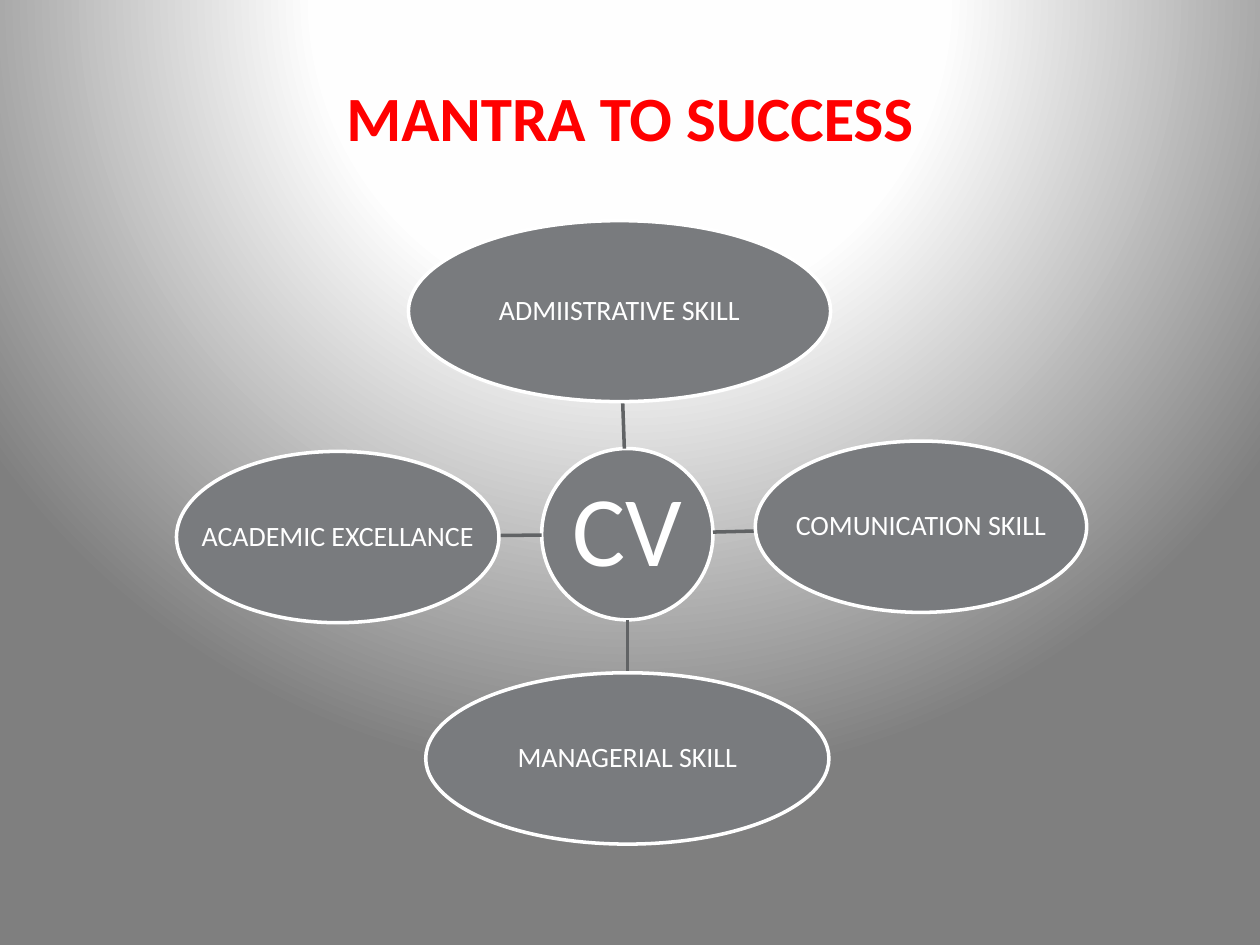
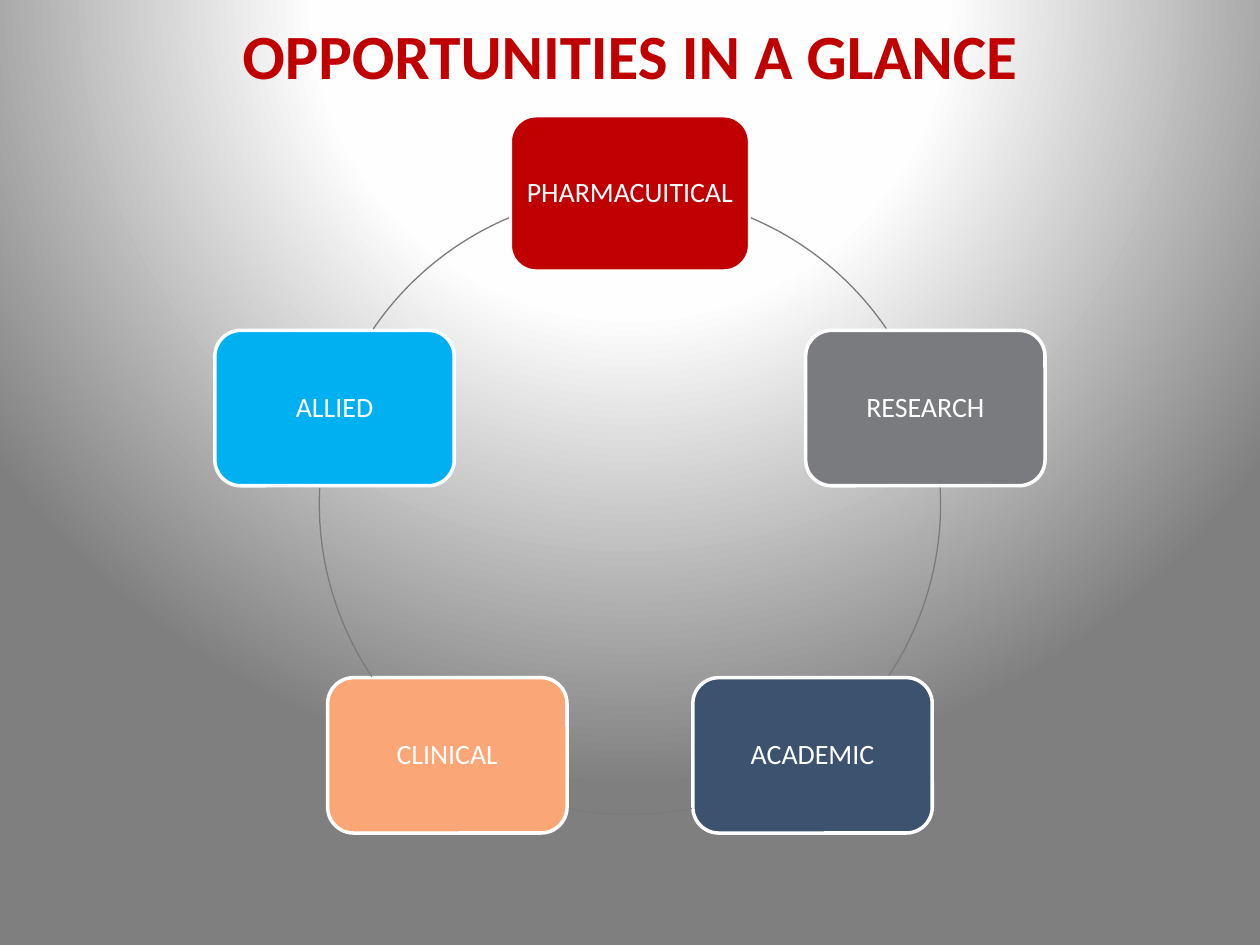
from math import cos, hypot, radians, sin

from pptx import Presentation
from pptx.dml.color import RGBColor
from pptx.enum.shapes import MSO_CONNECTOR as Link, MSO_SHAPE as Shape
from pptx.enum.text import MSO_ANCHOR as Anchor, PP_ALIGN as Align
from pptx.oxml import parse_xml
from pptx.oxml.ns import nsdecls, qn
from pptx.util import Pt

FONT = "Calibri"
COLORS = {
    "white": "FFFFFF", "near_white": "FEFEFE", "shade": "7F7F7F",
    "red": "FF0000", "dark_red": "C00000", "gray": "797B7E",
    "spoke": "616365", "navy": "3C526F", "peach": "FBA676", "sky": "00B0F0",
}

# Slide 1: hub and skills as (label, centre x, centre y, width, height)
HUB = ("CV", 358.5, 305.3, 97.9, 97.9)
SKILLS = [
    ("ADMIISTRATIVE SKILL", 354, 177.8, 241.2, 103.4),
    ("COMUNICATION SKILL", 526.3, 301, 189.4, 97.9),
    ("MANAGERIAL SKILL", 358.5, 433.4, 230.4, 97.9),
    ("ACADEMIC EXCELLANCE", 193, 306.9, 184.3, 97.9),
]

# Slide 2: fields clockwise from the top of a ring
FIELDS = [("PHARMACUITICAL", "dark_red"), ("RESEARCH", "gray"),
          ("ACADEMIC", "navy"), ("CLINICAL", "peach"), ("ALLIED", "sky")]
RING_X, RING_Y, RING_RADIUS = 360, 288, 177.5
FIELD_W, FIELD_H = 136.8, 88.8
# Visible arcs in degrees, clockwise from east
ARCS = [(292.9, 325.7), (357, 33.8), (78.5, 101.5), (146.2, 183), (214.3, 247.1)]


def rgb(name):
    return RGBColor.from_string(COLORS[name])


def set_background(master):
    """Radial gradient centred above the slide, shared by all slides."""
    master.background.fill.solid()
    solid = master.element.find(".//" + qn("p:bgPr")).find(qn("a:solidFill"))
    stops = "".join(
        f'<a:gs pos="{pos * 1000}"><a:srgbClr val="{COLORS[name]}"/></a:gs>'
        for pos, name in [(0, "white"), (40, "near_white"), (100, "shade")])
    gradient = parse_xml(
        f'<a:gradFill {nsdecls("a")} rotWithShape="1"><a:gsLst>{stops}</a:gsLst>'
        '<a:path path="circle"><a:fillToRect l="50000" t="-80000" r="50000" '
        'b="180000"/></a:path></a:gradFill>')
    solid.getparent().replace(solid, gradient)


def write(frame, text, size, color, bold=False):
    frame.vertical_anchor = Anchor.MIDDLE
    paragraph = frame.paragraphs[0]
    paragraph.alignment = Align.CENTER
    run = paragraph.add_run()
    run.text = text
    run.font.name, run.font.size, run.font.bold = FONT, Pt(size), bold
    run.font.color.rgb = rgb(color)
    return paragraph


def add_title(slide, text, top, height, color):
    title = slide.shapes.add_textbox(Pt(36), Pt(top), Pt(648), Pt(height))
    title.text_frame.word_wrap = True
    write(title.text_frame, text, 36, color, bold=True)


def add_node(slide, outline, label, x, y, width, height, color="gray", size=16):
    """Filled, white-edged shape centred on (x, y)."""
    node = slide.shapes.add_shape(outline, Pt(x - width / 2), Pt(y - height / 2),
                                  Pt(width), Pt(height))
    node.shadow.inherit = False
    node.fill.solid()
    node.fill.fore_color.rgb = rgb(color)
    node.line.color.rgb = rgb("white")
    node.line.width = Pt(2)
    frame = node.text_frame
    frame.word_wrap = False
    frame.margin_left = frame.margin_right = Pt(1)
    frame.margin_top = frame.margin_bottom = Pt(1)
    write(frame, label, size, "white").line_spacing = 0.9


def rim_point(ellipse, target):
    """Where the line from an ellipse's centre to a target's leaves its rim."""
    _, x, y, width, height = ellipse
    dx, dy = target[1] - x, target[2] - y
    scale = 1 / hypot(dx / (width / 2), dy / (height / 2))
    return Pt(x + dx * scale), Pt(y + dy * scale)


def add_spoke(slide, hub, skill):
    spoke = slide.shapes.add_connector(Link.STRAIGHT, *rim_point(hub, skill),
                                       *rim_point(skill, hub))
    spoke.line.color.rgb = rgb("spoke")
    spoke.line.width = Pt(2)
    spoke.element.spPr.append(parse_xml(f'<a:effectLst {nsdecls("a")}/>'))


def add_arc(slide, start, end):
    arc = slide.shapes.add_shape(
        Shape.ARC, Pt(RING_X - RING_RADIUS), Pt(RING_Y - RING_RADIUS),
        Pt(2 * RING_RADIUS), Pt(2 * RING_RADIUS))
    arc.shadow.inherit = False
    arc.fill.background()
    arc.line.color.rgb = rgb("gray")
    arc.line.width = Pt(0.75)
    # Angles are stored in 60000ths of a degree, adjustments in 100000ths
    arc.adjustments[0], arc.adjustments[1] = start * 0.6, end * 0.6


def build_mantra(slide):
    add_title(slide, "MANTRA TO SUCCESS", 21.6, 90, "red")
    add_node(slide, Shape.OVAL, *HUB, size=57)
    for skill in SKILLS:
        add_spoke(slide, HUB, skill)
        add_node(slide, Shape.OVAL, *skill)


def build_opportunities(slide):
    add_title(slide, "OPPORTUNITIES IN A GLANCE", 0, 62.6, "dark_red")
    for index, ((field, color), arc) in enumerate(zip(FIELDS, ARCS)):
        angle = radians(index * 360 / len(FIELDS) - 90)
        add_node(slide, Shape.ROUNDED_RECTANGLE, field,
                 RING_X + RING_RADIUS * cos(angle),
                 RING_Y + RING_RADIUS * sin(angle), FIELD_W, FIELD_H, color)
        add_arc(slide, *arc)


def main():
    deck = Presentation()
    deck.slide_width, deck.slide_height = Pt(720), Pt(540)
    set_background(deck.slide_master)
    blank = deck.slide_layouts[6]
    for build in (build_mantra, build_opportunities):
        build(deck.slides.add_slide(blank))
    deck.save("out.pptx")


if __name__ == "__main__":
    main()
